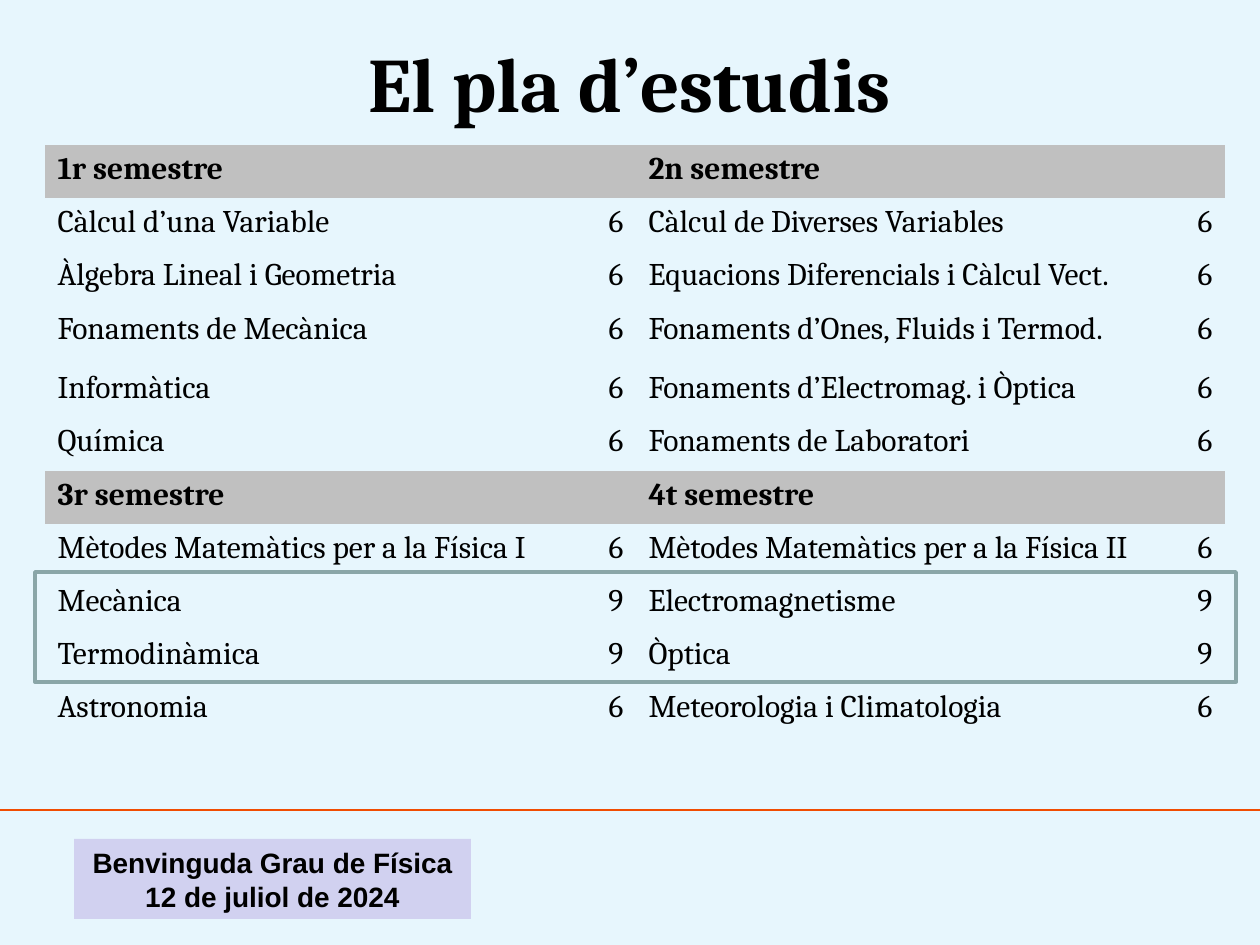
import pptx
import pptx.util
import pptx.dml.color
import pptx.enum.shapes
import pptx.enum.text
import pptx.oxml.ns
import lxml.etree

RGBColor = pptx.dml.color.RGBColor
ALIGN = pptx.enum.text.PP_ALIGN
ANCHOR = pptx.enum.text.MSO_ANCHOR
RECT = pptx.enum.shapes.MSO_SHAPE.RECTANGLE

BACKGROUND = RGBColor(0xE7, 0xF6, 0xFD)
BLACK = RGBColor(0x00, 0x00, 0x00)
GREY = RGBColor(0xC0, 0xC0, 0xC0)
ORANGE = RGBColor(0xF0, 0x4C, 0x02)
TEAL = RGBColor(0x8A, 0xA6, 0xA8)
LILAC = RGBColor(0xD1, 0xD1, 0xF0)
NO_STYLE = "{2D5ABB26-0587-4C30-8999-92F81FD0307C}"


def px(n):
    return pptx.util.Emu(round(n * 914400 / 126))


def write(tf, text, size, font, bold, align):
    p = tf.paragraphs[0]
    p.alignment = align
    r = p.add_run()
    r.text = text
    r.font.size = pptx.util.Pt(size)
    r.font.name = font
    r.font.bold = bold
    r.font.color.rgb = BLACK


prs = pptx.Presentation()
prs.slide_width = px(1260)
prs.slide_height = px(945)
s = prs.slides.add_slide(prs.slide_layouts[6])
s.background.fill.solid()
s.background.fill.fore_color.rgb = BACKGROUND

rule = s.shapes.add_connector(
    pptx.enum.shapes.MSO_CONNECTOR.STRAIGHT, px(0), px(810), px(1260), px(810))
rule.line.color.rgb = ORANGE
rule.line.width = pptx.util.Pt(1.5)
lxml.etree.SubElement(rule._element.spPr, pptx.oxml.ns.qn("a:effectLst"))

rows = [
    ("1r semestre", "", "2n semestre", ""),
    ("Càlcul d’una Variable", "6", "Càlcul de Diverses Variables", "6"),
    ("Àlgebra Lineal i Geometria", "6", "Equacions Diferencials i Càlcul Vect.", "6"),
    ("Fonaments de Mecànica", "6", "Fonaments d’Ones, Fluids i Termod.", "6"),
    ("Informàtica", "6", "Fonaments d’Electromag. i Òptica", "6"),
    ("Química", "6", "Fonaments de Laboratori", "6"),
    ("3r semestre", "", "4t semestre", ""),
    ("Mètodes Matemàtics per a la Física I", "6",
     "Mètodes Matemàtics per a la Física II", "6"),
    ("Mecànica", "9", "Electromagnetisme", "9"),
    ("Termodinàmica", "9", "Òptica", "9"),
    ("Astronomia", "6", "Meteorologia i Climatologia", "6"),
]
widths = [527, 64, 525, 64]
heights = [53, 53, 54, 59, 53, 54, 53, 53, 53, 53, 53]

table = s.shapes.add_table(
    len(rows), len(widths), px(45), px(145), px(sum(widths)), px(sum(heights))).table
table.first_row = False
table.horz_banding = False
table._tbl.tblPr.find(pptx.oxml.ns.qn("a:tableStyleId")).text = NO_STYLE
for column, width in zip(table.columns, widths):
    column.width = px(width)
for i, (values, height) in enumerate(zip(rows, heights)):
    table.rows[i].height = px(height)
    header = values[1] == ""
    for j, value in enumerate(values):
        cell = table.cell(i, j)
        if header:
            cell.fill.solid()
            cell.fill.fore_color.rgb = GREY
            if j % 2 == 0:
                cell.merge(table.cell(i, j + 1))
        else:
            cell.fill.background()
        if value:
            if j % 2:
                align = ALIGN.RIGHT
            elif header and j == 2:
                align = ALIGN.LEFT
            else:
                align = ALIGN.JUSTIFY
            write(cell.text_frame, value, 18, "Cambria", header, align)

title = s.shapes.add_textbox(px(63), px(38), px(1134), px(87))
title.text_frame.word_wrap = True
title.text_frame.vertical_anchor = ANCHOR.MIDDLE
write(title.text_frame, "El pla d’estudis", 44, "Cambria", True, ALIGN.CENTER)

frame = s.shapes.add_shape(RECT, px(35), px(572), px(1201), px(110))
frame.shadow.inherit = False
frame.fill.background()
frame.line.color.rgb = TEAL
frame.line.width = pptx.util.Pt(2)

footer = s.shapes.add_shape(RECT, px(74), px(839), px(397), px(80))
footer.shadow.inherit = False
footer.fill.solid()
footer.fill.fore_color.rgb = LILAC
footer.line.fill.background()
footer.text_frame.word_wrap = True
footer.text_frame.vertical_anchor = ANCHOR.MIDDLE
write(footer.text_frame, "Benvinguda Grau de Física 12 de juliol de 2024",
      16, "Arial", True, ALIGN.CENTER)

prs.save("out.pptx")
